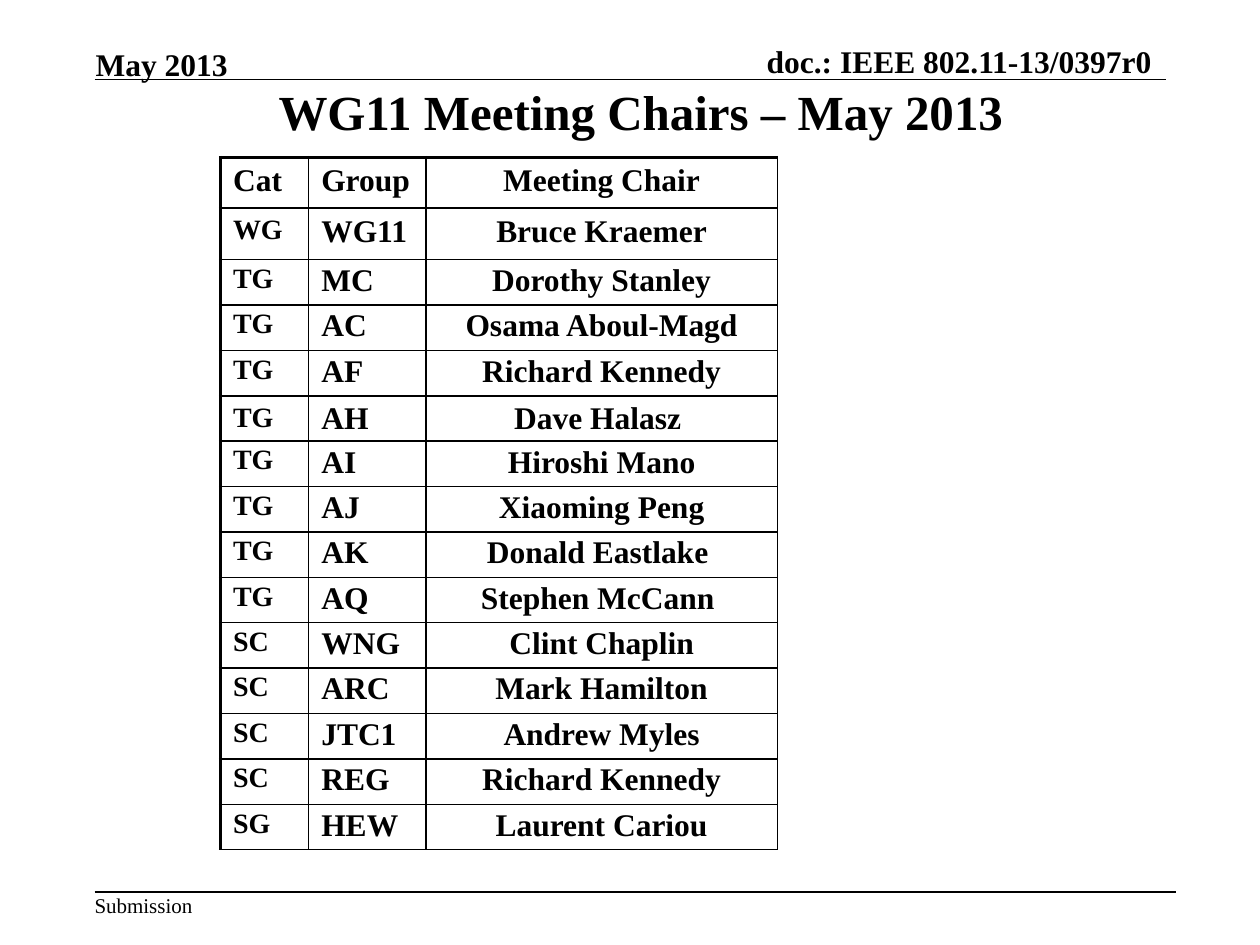
from lxml import etree
from pptx import Presentation
from pptx.dml.color import RGBColor
from pptx.enum.shapes import MSO_CONNECTOR
from pptx.enum.text import MSO_ANCHOR, PP_ALIGN
from pptx.oxml import parse_xml
from pptx.oxml.ns import nsdecls, qn
from pptx.util import Inches, Pt

BLACK = RGBColor(0, 0, 0)
FONT = "Times New Roman"

COLUMN_WIDTHS = (0.7, 0.93, 2.79)
HEADER_HEIGHT, WG_HEIGHT, GROUP_HEIGHT = 0.38, 0.41, 0.33
CHAIRS = [
    ("Cat", "Group", "Meeting Chair"),
    ("WG", "WG11", "Bruce Kraemer"),
    ("TG", "MC", "Dorothy Stanley"),
    ("TG", "AC", "Osama Aboul-Magd"),
    ("TG", "AF", "Richard Kennedy"),
    ("TG", "AH", "Dave Halasz "),
    ("TG", "AI", "Hiroshi Mano"),
    ("TG", "AJ", "Xiaoming Peng"),
    ("TG", "AK", "Donald Eastlake "),
    ("TG", "AQ", "Stephen McCann "),
    ("SC", "WNG", "Clint Chaplin"),
    ("SC", "ARC", "Mark Hamilton"),
    ("SC", "JTC1", "Andrew Myles"),
    ("SC", "REG", "Richard Kennedy"),
    ("SG", "HEW", "Laurent Cariou"),
]


def write(tf, text, size, bold=True, align=PP_ALIGN.LEFT):
    tf.text = text
    p = tf.paragraphs[0]
    p.alignment = align
    font = p.runs[0].font
    font.name, font.size, font.bold = FONT, Pt(size), bold
    font.color.rgb = BLACK


def add_label(slide, box, text, size, bold=True, align=PP_ALIGN.LEFT,
              anchor=MSO_ANCHOR.BOTTOM):
    tf = slide.shapes.add_textbox(*map(Inches, box)).text_frame
    tf.margin_left = tf.margin_right = tf.margin_top = tf.margin_bottom = 0
    tf.word_wrap = False
    tf.vertical_anchor = anchor
    write(tf, text, size, bold, align)


def add_rule(slide, left, right, y):
    line = slide.shapes.add_connector(
        MSO_CONNECTOR.STRAIGHT, *map(Inches, (left, y, right, y)))
    line.line.color.rgb = BLACK
    line.line.width = Pt(1)
    etree.SubElement(line._element.spPr, qn("a:effectLst"))


def add_header(slide, left, top, width, height):
    bottom = top + height
    add_label(slide, (left + 4.8, top, 3.59, 0.3),
              "doc.: IEEE 802.11-13/0397r0", 18, align=PP_ALIGN.RIGHT)
    add_rule(slide, left, left + width, bottom)
    add_label(slide, (left + 0.01, top + 0.03, 1.06, 0.3), "May 2013", 18)


def add_footer(slide, left, top, width, height):
    add_rule(slide, left, left + width, top)
    add_label(slide, (left, top, 0.78, height), "Submission", 12,
              bold=False, anchor=MSO_ANCHOR.TOP)


def add_title(slide, left, top, width, height):
    title = slide.shapes.title
    title.left, title.top = Inches(left), Inches(top)
    title.width, title.height = Inches(width), Inches(height)
    title.text_frame.vertical_anchor = MSO_ANCHOR.MIDDLE
    write(title.text_frame, "WG11 Meeting Chairs – May 2013", 28,
          align=PP_ALIGN.CENTER)


def set_borders(cell, widths):
    """Draw the cell's sides; widths maps L, R, T, B to points."""
    props = cell._tc.get_or_add_tcPr()
    for i, (side, width) in enumerate(widths.items()):
        props.insert(i, parse_xml(
            f'<a:ln{side} {nsdecls("a")} w="{Pt(width)}"><a:solidFill>'
            f'<a:srgbClr val="{BLACK}"/></a:solidFill></a:ln{side}>'))


def add_chairs_table(slide, left, top, width, height):
    frame = slide.shapes.add_table(
        len(CHAIRS), len(COLUMN_WIDTHS), *map(Inches, (left, top, width, height)))
    table = frame.table
    table.first_row = table.horz_banding = False
    for column, col_width in zip(table.columns, COLUMN_WIDTHS):
        column.width = Inches(col_width)

    for r, row in enumerate(CHAIRS):
        table.rows[r].height = Inches(
            (HEADER_HEIGHT, WG_HEIGHT)[r] if r < 2 else GROUP_HEIGHT)
        for c, text in enumerate(row):
            cell = table.cell(r, c)
            cell.fill.background()
            cell.margin_left = cell.margin_right = Inches(0.1)
            cell.margin_top = cell.margin_bottom = Inches(0.05 if r < 2 else 0.03)
            cell.vertical_anchor = (
                MSO_ANCHOR.MIDDLE if row[1] == "AH" else MSO_ANCHOR.TOP)
            write(cell.text_frame, text, 16 if c == 0 and r > 0 else 18,
                  align=PP_ALIGN.CENTER if c == 2 else PP_ALIGN.LEFT)
            # The left and top outer edges are heavier
            set_borders(cell, {"L": 2.25 if c == 0 else 1, "R": 1,
                               "T": 2.25 if r == 0 else 1, "B": 1})


def main():
    prs = Presentation()
    prs.slide_width, prs.slide_height = Inches(10), Inches(7.5)
    slide = prs.slides.add_slide(prs.slide_layouts[5])
    add_header(slide, 0.75, 0.33, 8.5, 0.3)
    add_footer(slide, 0.75, 7.08, 8.58, 0.2)
    add_title(slide, 0.17, 0.67, 9.83, 0.42)
    table_height = HEADER_HEIGHT + WG_HEIGHT + GROUP_HEIGHT * (len(CHAIRS) - 2)
    add_chairs_table(slide, 1.75, 1.25, sum(COLUMN_WIDTHS), table_height)
    prs.save("out.pptx")


if __name__ == "__main__":
    main()
